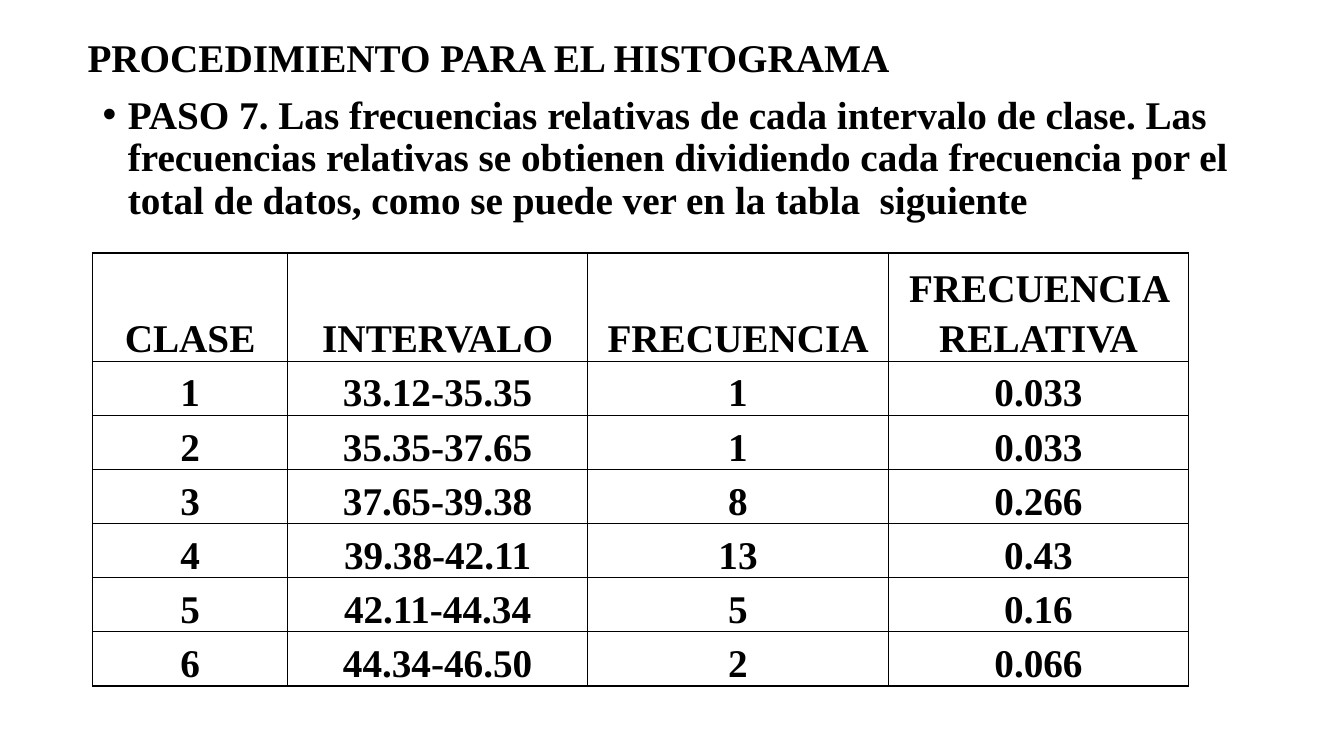
from dataclasses import dataclass

from lxml import etree
from pptx import Presentation
from pptx import util as u
from pptx.dml import color
from pptx.enum import text
from pptx.oxml import ns


@dataclass(frozen=True)
class Theme:
    font: str = "Times New Roman"
    size: int = 28
    ink: str = "000000"
    border: float = 1


@dataclass(frozen=True)
class TextBlock:
    words: str
    left: float
    top: float
    width: float
    height: float
    anchor: text.MSO_ANCHOR
    bullet: bool = False
    space_before: float = 0


THEME = Theme()
BLOCKS = [
    TextBlock("PROCEDIMIENTO PARA EL HISTOGRAMA", 0.77, 0.28, 11.5, 0.63,
              text.MSO_ANCHOR.MIDDLE),
    TextBlock("PASO 7. Las frecuencias relativas de cada intervalo de clase. "
              "Las frecuencias relativas se obtienen dividiendo cada frecuencia "
              "por el total de datos, como se puede ver en la tabla  siguiente",
              0.92, 0.9, 11.96, 1.4, text.MSO_ANCHOR.TOP,
              bullet=True, space_before=10),
]
FREQUENCY_ROWS = [
    ("CLASE", "INTERVALO", "FRECUENCIA", "FRECUENCIA RELATIVA"),
    ("1", "33.12-35.35", "1", "0.033"),
    ("2", "35.35-37.65", "1", "0.033"),
    ("3", "37.65-39.38", "8", "0.266"),
    ("4", "39.38-42.11", "13", "0.43"),
    ("5", "42.11-44.34", "5", "0.16"),
    ("6", "44.34-46.50", "2", "0.066"),
]
COLUMN_WIDTHS = [1.93, 2.98, 2.98, 2.98]
HEADER_HEIGHT = 0.98
ROW_HEIGHT = 0.49


def write_text(frame, words: str, *, align=text.PP_ALIGN.LEFT, spacing: float = 0.9,
               before: float = 0, after: float = 0):
    para = frame.paragraphs[0]
    para.alignment = align
    para.line_spacing = spacing
    para.space_before = u.Pt(before)
    para.space_after = u.Pt(after)
    span = para.add_run()
    span.text = words
    span.font.name = THEME.font
    span.font.size = u.Pt(THEME.size)
    span.font.bold = True
    span.font.color.rgb = color.RGBColor.from_string(THEME.ink)
    return para


def add_bullet(para) -> None:
    properties = para._p.get_or_add_pPr()
    properties.set("marL", str(u.Inches(0.25)))
    properties.set("indent", str(u.Inches(-0.25)))
    etree.SubElement(properties, ns.qn("a:buFont"), typeface="Arial")
    etree.SubElement(properties, ns.qn("a:buChar"), char="•")


def add_block(page, block: TextBlock) -> None:
    box = page.shapes.add_textbox(u.Inches(block.left), u.Inches(block.top),
                                  u.Inches(block.width), u.Inches(block.height))
    box.text_frame.word_wrap = True
    box.text_frame.vertical_anchor = block.anchor
    para = write_text(box.text_frame, block.words, before=block.space_before)
    if block.bullet:
        add_bullet(para)


def add_borders(cell) -> None:
    properties = cell._tc.get_or_add_tcPr()
    for position, side in enumerate(("lnL", "lnR", "lnT", "lnB")):
        line = etree.Element(ns.qn(f"a:{side}"), w=str(u.Pt(THEME.border)))
        fill = etree.SubElement(line, ns.qn("a:solidFill"))
        etree.SubElement(fill, ns.qn("a:srgbClr"), val=THEME.ink)
        properties.insert(position, line)


def add_frequency_table(page) -> None:
    total_height = HEADER_HEIGHT + ROW_HEIGHT * (len(FREQUENCY_ROWS) - 1)
    table = page.shapes.add_table(
        len(FREQUENCY_ROWS), len(COLUMN_WIDTHS), u.Inches(0.92), u.Inches(2.51),
        u.Inches(sum(COLUMN_WIDTHS)), u.Inches(total_height)).table
    table.first_row = False
    table.horz_banding = False
    for column, width in zip(table.columns, COLUMN_WIDTHS):
        column.width = u.Inches(width)
    for index, (row, values) in enumerate(zip(table.rows, FREQUENCY_ROWS)):
        row.height = u.Inches(ROW_HEIGHT if index else HEADER_HEIGHT)
        for cell, value in zip(row.cells, values):
            cell.fill.background()
            cell.vertical_anchor = text.MSO_ANCHOR.BOTTOM
            cell.margin_left = cell.margin_right = u.Inches(0.05)
            cell.margin_top = cell.margin_bottom = 0
            write_text(cell.text_frame, value, align=text.PP_ALIGN.CENTER,
                       spacing=1.15, after=10)
            add_borders(cell)


def main() -> None:
    deck = Presentation()
    deck.slide_width = u.Inches(13.33)
    deck.slide_height = u.Inches(7.5)
    page = deck.slides.add_slide(deck.slide_layouts[6])
    for block in BLOCKS:
        add_block(page, block)
    add_frequency_table(page)
    deck.save("out.pptx")


if __name__ == "__main__":
    main()
